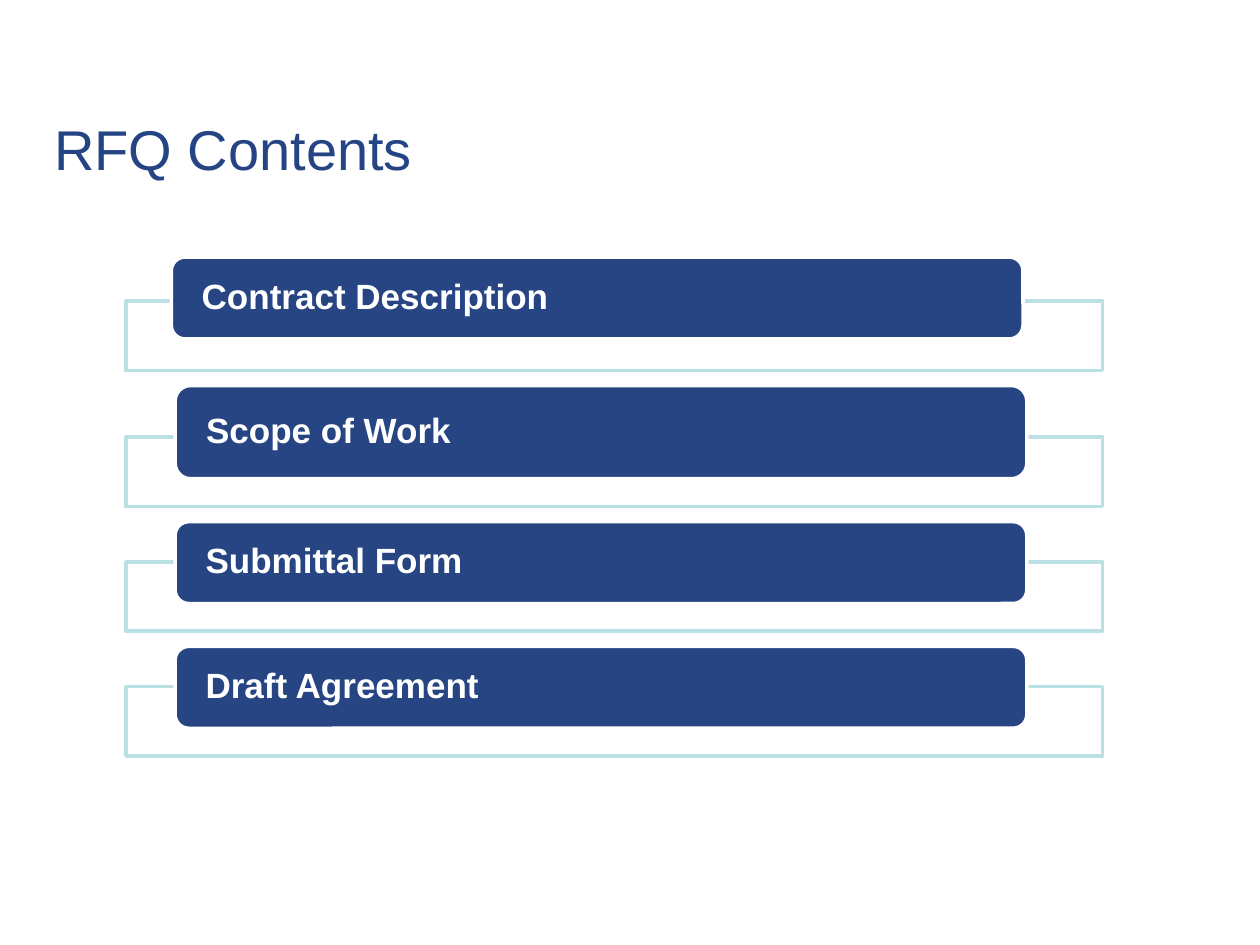
from dataclasses import dataclass

from pptx import Presentation
from pptx.dml.color import RGBColor as Color
from pptx.enum.shapes import MSO_SHAPE as Shape
from pptx.enum.text import MSO_ANCHOR as Anchor, MSO_AUTO_SIZE as AutoSize, PP_ALIGN as Align
from pptx.util import Inches, Pt


@dataclass(frozen=True)
class Theme:
    """Colours, font and sizes of the deck."""
    title: Color = Color.from_string("254484")
    bar: Color = Color.from_string("274583")
    frame: Color = Color.from_string("BBE0E3")
    white: Color = Color.from_string("FFFFFF")
    font: str = "Arial"
    title_size: Pt = Pt(32)
    title_spacing: Pt = Pt(28)
    item_size: Pt = Pt(20)
    line_width: Pt = Pt(2)


THEME = Theme()
FRAME_HEIGHT = 0.55
BAR_INDENT = 0.39
BAR_WIDTH = 6.76
BAR_OVERLAP = 0.33
ROW_GAP = 0.34
ITEMS = [
    ("Contract Description", 0.65, -0.03),
    ("Scope of Work", 0.74, 0),
    ("Submittal Form", 0.65, 0),
    ("Draft Agreement", 0.65, 0),
]


def format_text(para, size, color, bold):
    """Left-align a paragraph and style its runs."""
    para.alignment = Align.LEFT
    for span in para.runs:
        span.font.name = THEME.font
        span.font.size = size
        span.font.bold = bold
        span.font.color.rgb = color


def add_title(page, left, top, width, height, text):
    """Place the title placeholder in the given box."""
    box = page.shapes.title
    box.left, box.top, box.width, box.height = map(Inches, (left, top, width, height))
    frame = box.text_frame
    frame.text = text
    frame.word_wrap = False
    frame.auto_size = AutoSize.SHAPE_TO_FIT_TEXT
    frame.vertical_anchor = Anchor.TOP
    para = frame.paragraphs[0]
    para.line_spacing = THEME.title_spacing
    format_text(para, THEME.title_size, THEME.title, False)


def add_panel(page, kind, left, top, width, height, fill, line):
    """Draw one filled and outlined shape."""
    panel = page.shapes.add_shape(kind, *map(Inches, (left, top, width, height)))
    panel.shadow.inherit = False
    panel.fill.solid()
    panel.fill.fore_color.rgb = fill
    panel.line.color.rgb = line
    panel.line.width = THEME.line_width
    return panel


def add_bar(page, left, top, width, height, text):
    """Draw a rounded bar with its label."""
    bar = add_panel(page, Shape.ROUNDED_RECTANGLE, left, top, width, height,
                    THEME.bar, THEME.white)
    frame = bar.text_frame
    frame.text = text
    frame.word_wrap = True
    frame.vertical_anchor = Anchor.MIDDLE
    frame.margin_left = frame.margin_right = Inches(0.21)
    frame.margin_top = frame.margin_bottom = 0
    para = frame.paragraphs[0]
    para.line_spacing = 0.9
    format_text(para, THEME.item_size, THEME.white, True)


def add_contents(page, left, top, width, items):
    """Stack the framed bars downwards from the top of the first frame."""
    for index, (text, height, shift) in enumerate(items):
        if index:
            top += height + ROW_GAP
        add_panel(page, Shape.RECTANGLE, left, top, width, FRAME_HEIGHT,
                  THEME.white, THEME.frame)
        add_bar(page, left + BAR_INDENT + shift, top + BAR_OVERLAP - height + shift,
                BAR_WIDTH, height, text)


def main():
    """Build and save the deck."""
    deck = Presentation()
    deck.slide_width, deck.slide_height = Inches(10), Inches(7.5)
    page = deck.slides.add_slide(deck.slide_layouts.get_by_name("Title Only"))
    add_title(page, 0.33, 1, 3.07, 0.49, "RFQ Contents")
    add_contents(page, 1, 2.39, 7.75, ITEMS)
    deck.save("out.pptx")


if __name__ == "__main__":
    main()
